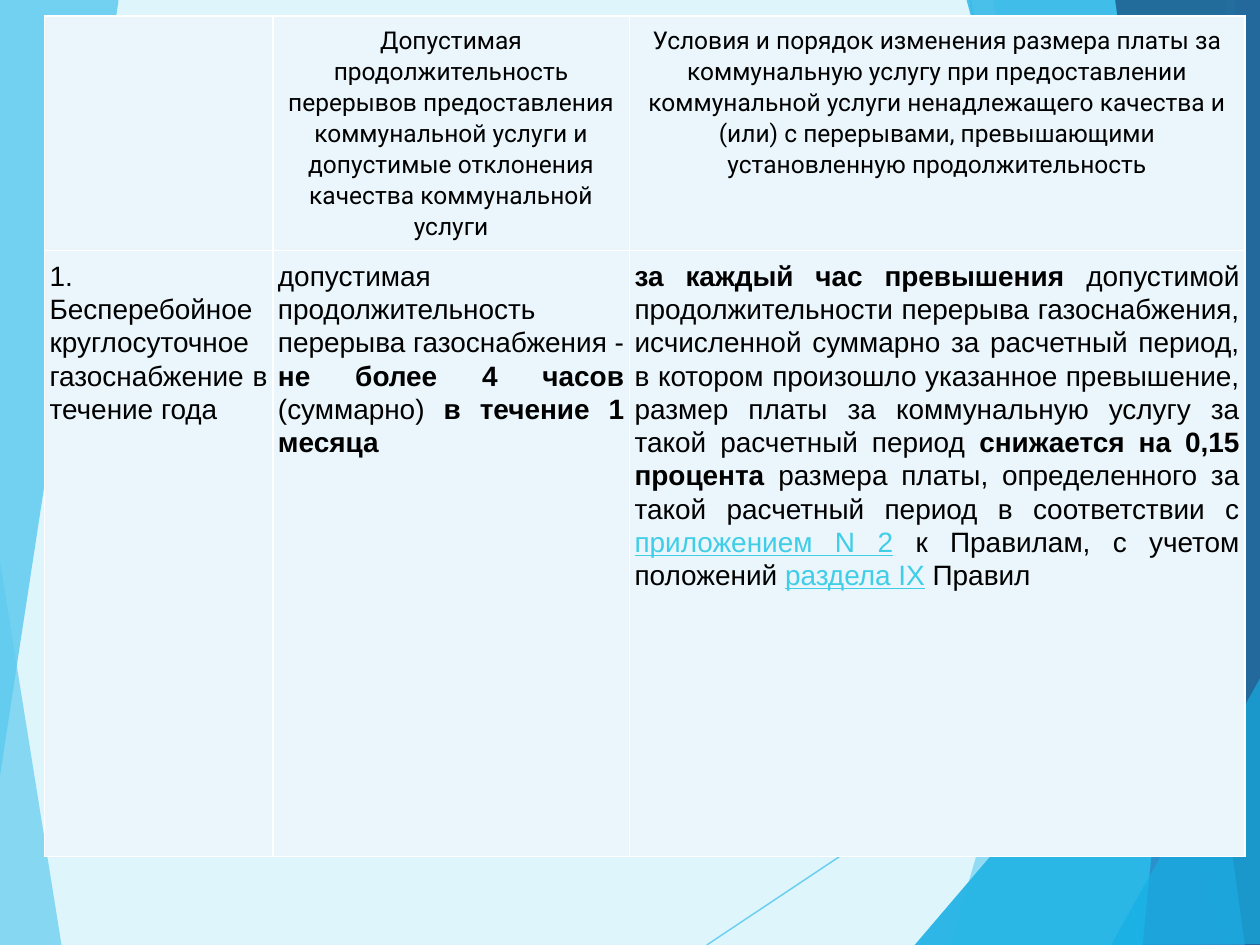
"""Build a slide with a table of gas supply rules over a faceted blue backdrop."""
from lxml import etree
from pptx import Presentation
from pptx.dml.color import RGBColor
from pptx.enum.shapes import MSO_CONNECTOR
from pptx.enum.text import PP_ALIGN
from pptx.oxml.ns import qn
from pptx.util import Pt

STRAIGHT = MSO_CONNECTOR.STRAIGHT
CENTER, JUSTIFY = PP_ALIGN.CENTER, PP_ALIGN.JUSTIFY

COLORS = {
    "backdrop": "DFF5FC", "sky": "5FCBEF", "azure": "17B0E4", "blue": "2E83C3",
    "navy": "226292", "cell": "EAF6FC", "border": "FFFFFF", "text": "000000",
    "link": "3FCDE7",
}

LOWER_LEFT = ("sky", 70, [(-0.7, 316), (35.3, 540.7), (-0.7, 540)])
UPPER_LEFT = ("sky", 85, [(-0.7, 0), (67.7, -0.7), (67.7, 0.7), (-0.7, 447.8)])
RIGHT_FACETS = [
    ("sky", 36, [(702, 0), (542.9, 540), (721.4, 540.7), (720.7, 0.7)]),
    ("sky", 20, [(567.4, -0.7), (661.7, 540), (720.7, 540), (720.7, -0.7)]),
    ("azure", 66, [(522.7, 540), (720, 308.9), (720.7, 540)]),
    ("azure", 50, [(552.2, -0.7), (698.4, 540), (720.7, 539.3), (720.7, -0.7)]),
    ("blue", 70, [(706.3, -0.7), (653, 540), (720.7, 540), (720, -0.7)]),
    ("navy", 82, [(637.2, -0.7), (711.4, 540), (721.4, 540), (720, -0.7)]),
    ("azure", 66, [(635, 540), (721.4, 385.2), (721.4, 539.3)]),
]
RAYS = [((403.9, 540), (720.7, 329)), ((554.4, 0), (650.9, 540))]
RAY_OPACITY = 70

TABLE_LEFT, TABLE_TOP = 25.4, 9.2
COLUMN_WIDTHS = [130.5, 203.8, 351.7]
ROW_HEIGHTS = [130.3, 346.3]
ROW_STYLES = [("Roboto", 14, CENTER), ("Arial", 16, JUSTIFY)]
ROWS = [
    [
        [],
        [("Допустимая продолжительность перерывов предоставления коммунальной "
          "услуги и допустимые отклонения качества коммунальной услуги", "plain")],
        [("Условия и порядок изменения размера платы за коммунальную услугу при "
          "предоставлении коммунальной услуги ненадлежащего качества и (или) с "
          "перерывами, превышающими установленную продолжительность", "plain")],
    ],
    [
        [("1. Бесперебойное круглосуточное газоснабжение в течение года", "plain")],
        [("допустимая продолжительность перерыва газоснабжения - ", "plain"),
         ("не более 4 часов ", "bold"),
         ("(суммарно) ", "plain"),
         ("в течение 1 месяца", "bold")],
        [("за каждый час превышения ", "bold"),
         ("допустимой продолжительности перерыва газоснабжения, исчисленной "
          "суммарно за расчетный период, в котором произошло указанное "
          "превышение, размер платы за коммунальную услугу за такой расчетный "
          "период ", "plain"),
         ("снижается на 0,15 процента ", "bold"),
         ("размера платы, определенного за такой расчетный период в "
          "соответствии с ", "plain"),
         ("приложением N 2", "link"),
         (" к Правилам, с учетом положений ", "plain"),
         ("раздела IX", "link"),
         (" Правил", "plain")],
    ],
]


def rgb(name):
    return RGBColor.from_string(COLORS[name])


def set_opacity(shape, percent):
    for color in shape._element.spPr.iter(qn("a:srgbClr")):
        etree.SubElement(color, qn("a:alpha"), val=str(percent * 1000))


def add_facet(page, color, opacity, corners):
    points = [(Pt(x), Pt(y)) for x, y in corners]
    builder = page.shapes.build_freeform(*points[0], scale=1.0)
    builder.add_line_segments(points[1:], close=True)
    facet = builder.convert_to_shape()
    facet.shadow.inherit = False
    facet.fill.solid()
    facet.fill.fore_color.rgb = rgb(color)
    facet.line.fill.background()
    set_opacity(facet, opacity)


def add_ray(page, start, end):
    ray = page.shapes.add_connector(STRAIGHT, *(Pt(v) for v in start + end))
    ray.line.color.rgb = rgb("sky")
    ray.line.width = Pt(0.75)
    set_opacity(ray, RAY_OPACITY)
    etree.SubElement(ray._element.spPr, qn("a:effectLst"))


def add_backdrop(page):
    page.background.fill.solid()
    page.background.fill.fore_color.rgb = rgb("backdrop")
    add_facet(page, *LOWER_LEFT)
    for _ in range(2):
        for start, end in RAYS:
            add_ray(page, start, end)
        for facet in RIGHT_FACETS:
            add_facet(page, *facet)
    add_facet(page, *UPPER_LEFT)


def format_cell(cell):
    cell.margin_left = cell.margin_right = Pt(3)
    cell.margin_top = cell.margin_bottom = Pt(5)
    properties = cell._tc.get_or_add_tcPr()
    for side in ("lnL", "lnR", "lnT", "lnB"):
        border = etree.SubElement(properties, qn(f"a:{side}"), w=str(Pt(1)))
        fill = etree.SubElement(border, qn("a:solidFill"))
        etree.SubElement(fill, qn("a:srgbClr"), val=COLORS["border"])
    cell.fill.solid()
    cell.fill.fore_color.rgb = rgb("cell")


def write_cell(cell, spans, font_name, size, alignment):
    para = cell.text_frame.paragraphs[0]
    para.alignment = alignment
    para.line_spacing = 1.07
    for text, style in spans:
        span = para.add_run()
        span.text = text
        span.font.name = font_name
        span.font.size = Pt(size)
        span.font.bold = style == "bold"
        span.font.underline = style == "link"
        span.font.color.rgb = rgb("link" if style == "link" else "text")


def add_rules_table(page):
    frame = page.shapes.add_table(
        len(ROWS), len(COLUMN_WIDTHS), Pt(TABLE_LEFT), Pt(TABLE_TOP),
        Pt(sum(COLUMN_WIDTHS)), Pt(sum(ROW_HEIGHTS)))
    table = frame.table
    table.first_row = table.horz_banding = False
    for column, width in zip(table.columns, COLUMN_WIDTHS):
        column.width = Pt(width)
    for row, height, contents, style in zip(table.rows, ROW_HEIGHTS, ROWS, ROW_STYLES):
        row.height = Pt(height)
        for cell, spans in zip(row.cells, contents):
            format_cell(cell)
            write_cell(cell, spans, *style)


def main():
    deck = Presentation()
    deck.slide_width, deck.slide_height = Pt(720), Pt(540)
    page = deck.slides.add_slide(deck.slide_layouts[6])
    add_backdrop(page)
    add_rules_table(page)
    deck.save("out.pptx")


if __name__ == "__main__":
    main()
